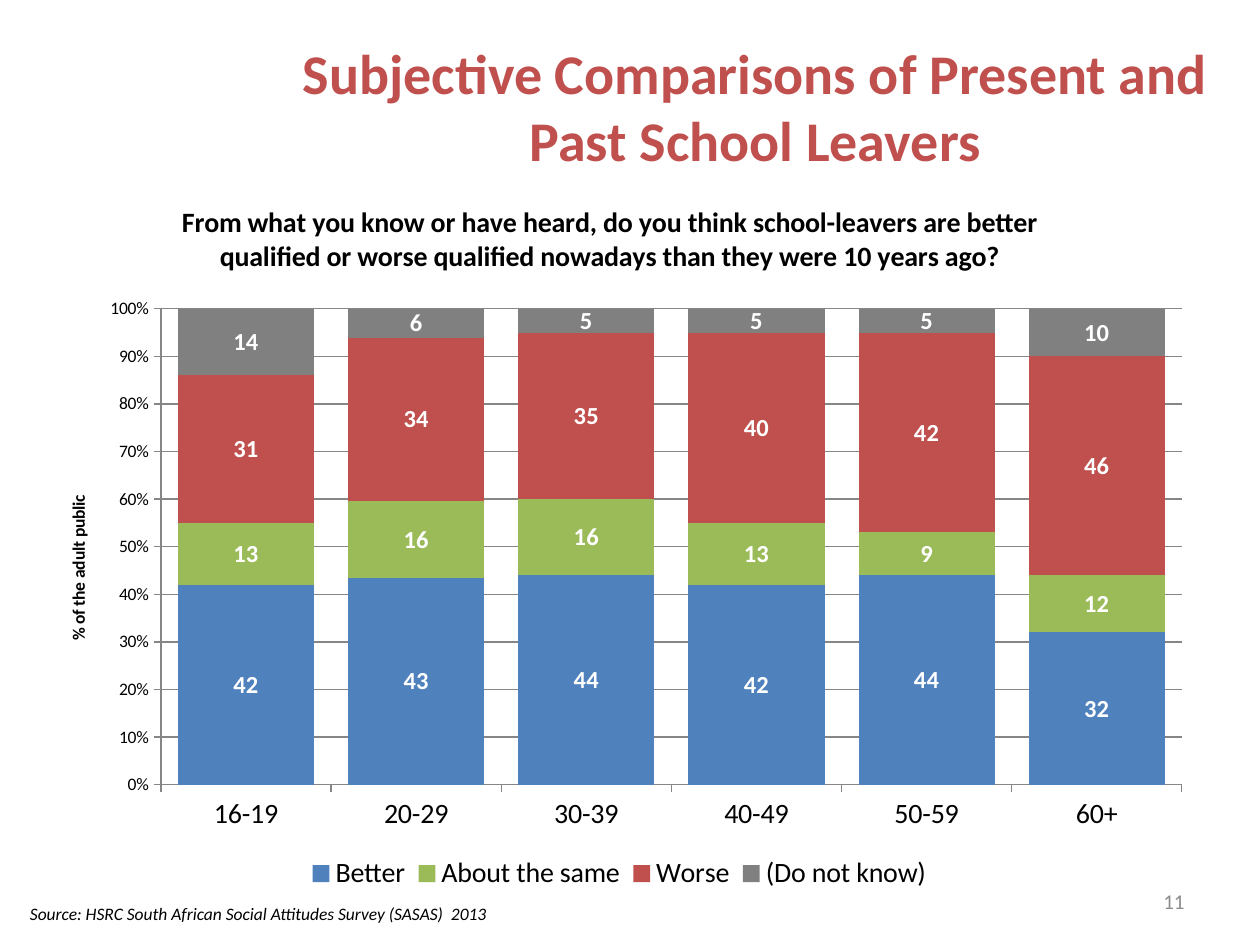
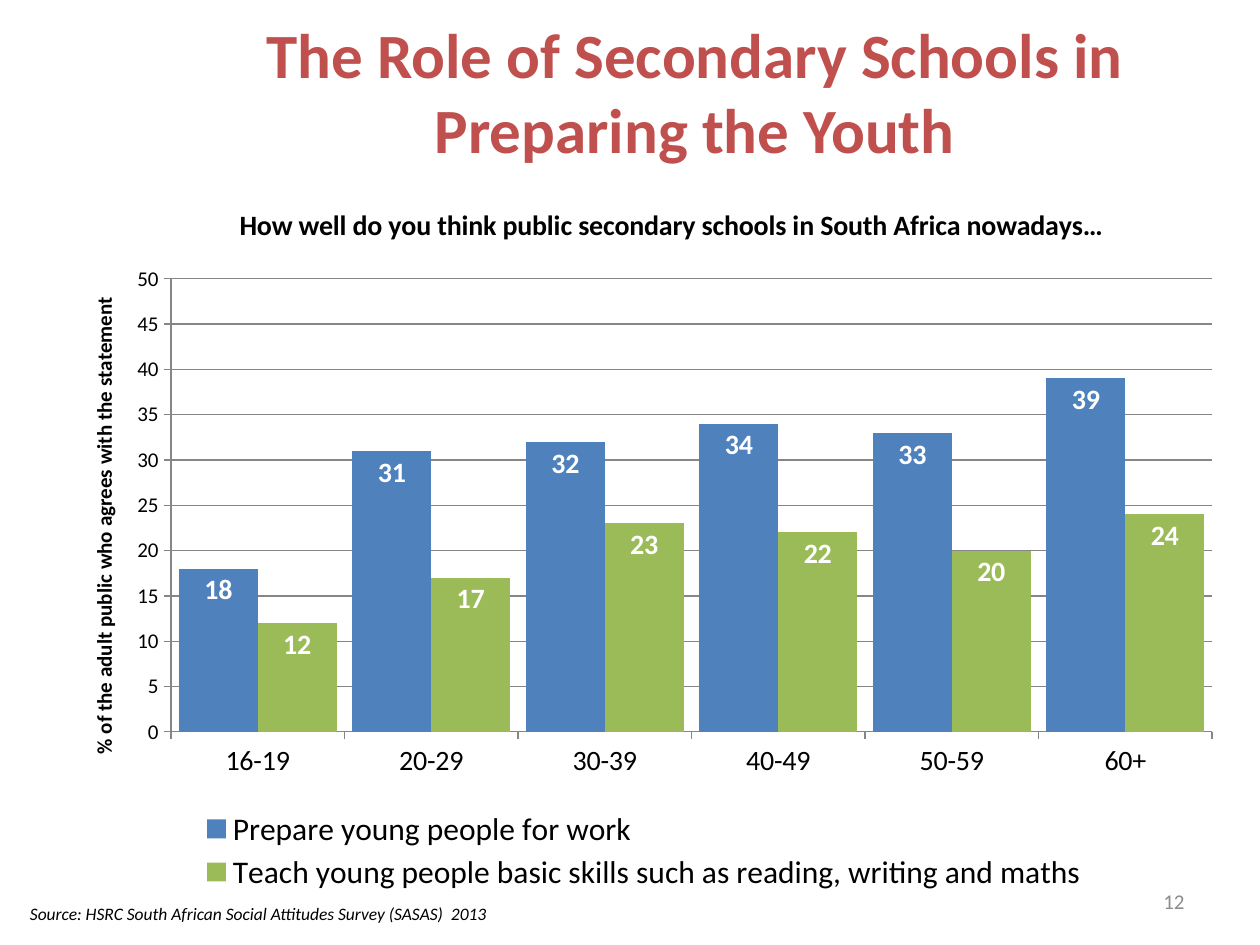
from lxml.etree import SubElement
from pptx import Presentation
from pptx.chart.data import CategoryChartData
from pptx.dml.color import RGBColor
from pptx.enum.chart import XL_CHART_TYPE, XL_LABEL_POSITION, XL_LEGEND_POSITION, XL_TICK_MARK
from pptx.enum.text import MSO_ANCHOR, PP_ALIGN
from pptx.oxml.ns import qn
from pptx.util import Pt

FONT = "Calibri"
COLORS = {
    "black": "000000", "white": "FFFFFF", "title": "C0504D", "number": "8C8C8C", "grid": "868686",
    "blue": "4F81BD", "green": "9BBB59", "red": "C0504D", "gray": "808080",
}
SOURCE = "Source: HSRC South African Social Attitudes Survey (SASAS)\u00a0 2013".replace("\u00a0", " ")
AGE_GROUPS = ["16-19", "20-29", "30-39", "40-49", "50-59", "60+"]

# Boxes are (left, top, width, height) in points on the page; anchors are (left, top).
PAGES = [
    {
        "number": "11",
        "title": "Subjective Comparisons of Present and Past School Leavers",
        "title_box": (150.5, 9.4, 562.3, 101.5),
        "title_size": 32,
        "chart_type": XL_CHART_TYPE.COLUMN_STACKED_100,
        "chart_box": (20.2, 102.2, 668.9, 413.3),
        "plot_box": (92, 176.5, 583.4, 272),
        "question": "From what you know or have heard, do you think school-leavers are better "
                    "qualified or worse qualified nowadays than they were 10 years ago?",
        "question_at": (101, 113),
        "axis_title": "% of the adult public",
        "axis_title_at": (36.5, 281),
        "axis_size": 10, "axis_max": 1, "axis_step": 0.1, "axis_format": "0%",
        "gap": 25, "overlap": 100,
        "label_size": 14, "label_position": XL_LABEL_POSITION.CENTER,
        "legend_size": 16, "legend_box": (171, 491, 366, 21),
        "series": [
            ("Better", "blue", [42, 43, 44, 42, 44, 32]),
            ("About the same", "green", [13, 16, 16, 13, 9, 12]),
            ("Worse", "red", [31, 34, 35, 40, 42, 46]),
            ("(Do not know)", "gray", [14, 6, 5, 5, 5, 10]),
        ],
    },
    {
        "number": "12",
        "title": "The Role of Secondary Schools in Preparing the Youth",
        "title_box": (115.9, 15.1, 562.3, 73.4),
        "title_size": 36,
        "chart_type": XL_CHART_TYPE.COLUMN_CLUSTERED,
        "chart_box": (31, 105.8, 674.6, 407.5),
        "plot_box": (97.7, 159.4, 594.9, 258.9),
        "question": "How well do you think public secondary schools in South Africa nowadays…",
        "question_at": (134, 115),
        "axis_title": "% of the adult public who agrees with the statement",
        "axis_title_at": (49, 167.5),
        "axis_size": 12, "axis_max": 50, "axis_step": 5, "axis_format": "0",
        "gap": 20, "overlap": 0,
        "label_size": 16, "label_position": XL_LABEL_POSITION.INSIDE_END,
        "legend_size": 18, "legend_box": (114, 460, 508, 52),
        "series": [
            ("Prepare young people for work", "blue", [18, 31, 32, 34, 33, 39]),
            ("Teach young people basic skills such as reading, writing and maths", "green",
             [12, 17, 23, 22, 20, 24]),
        ],
    },
]


def color(name):
    return RGBColor.from_string(COLORS[name])


def set_font(font, size, color_name="black", bold=False, italic=False):
    font.name, font.size, font.bold, font.italic = FONT, Pt(size), bold, italic
    font.color.rgb = color(color_name)


def add_text(page, text, box, align=PP_ALIGN.LEFT, anchor=MSO_ANCHOR.TOP, **font_format):
    frame = page.shapes.add_textbox(*map(Pt, box)).text_frame
    frame.word_wrap = True
    frame.vertical_anchor = anchor
    para = frame.paragraphs[0]
    para.alignment = align
    span = para.add_run()
    span.text = text
    set_font(span.font, **font_format)


def place(element, box, chart_box, inner=False):
    """Fix a chart part at a page position, as fractions of the chart."""
    for old in element.findall(qn("c:layout")):
        element.remove(old)
    layout = element.makeelement(qn("c:layout"))
    overlay = element.find(qn("c:overlay"))
    element.insert(0 if overlay is None else element.index(overlay), layout)
    manual = SubElement(layout, qn("c:manualLayout"))
    left, top, width, height = chart_box
    settings = [("layoutTarget", "inner")] if inner else []
    settings += [("xMode", "edge"), ("yMode", "edge")]
    fractions = [(box[0] - left) / width, (box[1] - top) / height]
    fractions += [length / whole for length, whole in zip(box[2:], (width, height))]
    settings += [(tag, f"{part:.4f}") for tag, part in zip("xywh", fractions)]
    for tag, value in settings:
        SubElement(manual, qn(f"c:{tag}")).set("val", value)


def write_title(title, text, size, position, chart_box):
    para = title.text_frame.paragraphs[0]
    span = para.add_run()
    span.text = text
    set_font(span.font, size, bold=True)
    place(title._element, position, chart_box)


def style_axis(axis, size):
    axis.major_tick_mark = XL_TICK_MARK.OUTSIDE
    axis.minor_tick_mark = XL_TICK_MARK.NONE
    axis.format.line.color.rgb = color("grid")
    axis.format.line.width = Pt(0.75)
    set_font(axis.tick_labels.font, size)


def add_survey_chart(page, survey):
    data = CategoryChartData(number_format="0")
    data.categories = AGE_GROUPS
    for name, _, values in survey["series"]:
        data.add_series(name, values)
    box = survey["chart_box"]
    chart = page.shapes.add_chart(survey["chart_type"], *map(Pt, box), data).chart
    set_font(chart.font, survey["axis_size"])
    chart.has_title = True
    write_title(chart.chart_title, survey["question"], 16, survey["question_at"], box)

    style_axis(chart.category_axis, 16)
    axis = chart.value_axis
    style_axis(axis, survey["axis_size"])
    axis.minimum_scale, axis.maximum_scale = 0, survey["axis_max"]
    axis.major_unit = survey["axis_step"]
    axis.tick_labels.number_format = survey["axis_format"]
    axis.tick_labels.number_format_is_linked = False
    axis.has_major_gridlines = True
    axis.major_gridlines.format.line.color.rgb = color("grid")
    axis.major_gridlines.format.line.width = Pt(0.75)
    axis.has_title = True
    write_title(axis.axis_title, survey["axis_title"], survey["axis_size"],
                survey["axis_title_at"], box)

    plot = chart.plots[0]
    plot.vary_by_categories = False
    plot.gap_width, plot.overlap = survey["gap"], survey["overlap"]
    for series, (_, fill, _) in zip(plot.series, survey["series"]):
        series.format.fill.solid()
        series.format.fill.fore_color.rgb = color(fill)
        labels = series.data_labels
        labels.show_value = True
        labels.number_format, labels.number_format_is_linked = "0", False
        labels.position = survey["label_position"]
        set_font(labels.font, survey["label_size"], "white", bold=True)

    chart.has_legend = True
    legend = chart.legend
    legend.position = XL_LEGEND_POSITION.BOTTOM
    legend.include_in_layout = False
    set_font(legend.font, survey["legend_size"])
    place(legend._element, survey["legend_box"], box)
    place(chart._chartSpace.chart.plotArea, survey["plot_box"], box, inner=True)


def main():
    deck = Presentation()
    deck.slide_width, deck.slide_height = Pt(720), Pt(540)
    for survey in PAGES:
        page = deck.slides.add_slide(deck.slide_layouts[6])
        add_text(page, survey["number"], (516, 500.5, 168, 28.75), align=PP_ALIGN.RIGHT,
                 anchor=MSO_ANCHOR.MIDDLE, size=12, color_name="number")
        add_text(page, SOURCE, (10, 512.6, 505.4, 19), size=10, italic=True)
        add_text(page, survey["title"], survey["title_box"], align=PP_ALIGN.CENTER,
                 anchor=MSO_ANCHOR.MIDDLE, size=survey["title_size"], color_name="title", bold=True)
        add_survey_chart(page, survey)
    deck.save("out.pptx")


if __name__ == "__main__":
    main()
